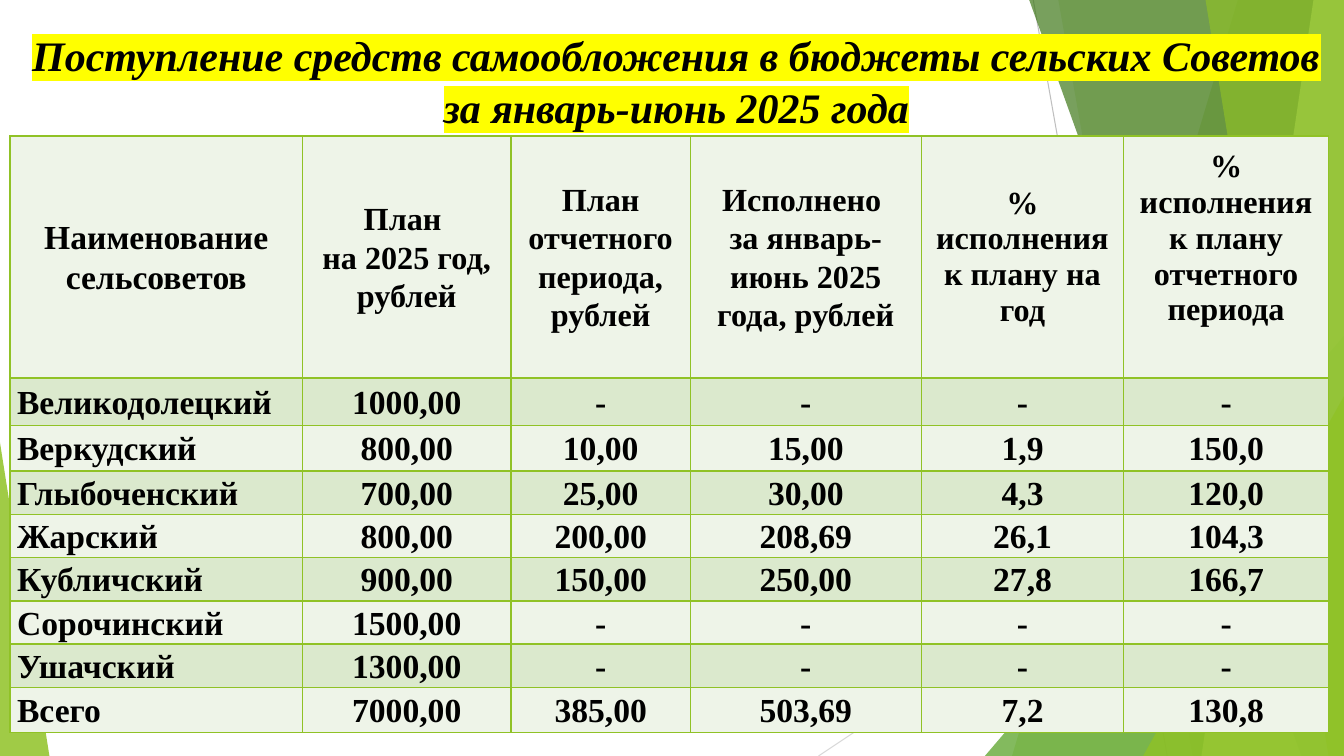
from lxml.etree import SubElement
from pptx import Presentation
from pptx.dml.color import RGBColor
from pptx.enum.shapes import MSO_CONNECTOR, MSO_SHAPE
from pptx.enum.text import MSO_ANCHOR, PP_ALIGN
from pptx.oxml.ns import qn
from pptx.util import Inches, Pt

WIDTH, HEIGHT = Inches(13.333), Inches(7.5)
GREEN = "90C226"
BANDS = ("EEF4E8", "DBE9CD")
TITLE = "Поступление средств самообложения в бюджеты сельских Советов за январь-июнь 2025 года"
HEADER = [
    "Наименование сельсоветов",
    "План \nна 2025 год, рублей",
    "План отчетного периода, рублей",
    "Исполнено \nза январь-июнь 2025 года, рублей",
    "% исполнения к плану на год",
    "% исполнения к плану отчетного периода",
]
COUNCILS = [
    ["Великодолецкий", "1000,00", "-", "-", "-", "-"],
    ["Веркудский", "800,00", "10,00", "15,00", "1,9", "150,0"],
    ["Глыбоченский", "700,00", "25,00", "30,00", "4,3", "120,0"],
    ["Жарский", "800,00", "200,00", "208,69", "26,1", "104,3"],
    ["Кубличский", "900,00", "150,00", "250,00", "27,8", "166,7"],
    ["Сорочинский", "1500,00", "-", "-", "-", "-"],
    ["Ушачский", "1300,00", "-", "-", "-", "-"],
    ["Всего", "7000,00", "385,00", "503,69", "7,2", "130,8"],
]
COLUMN_WEIGHTS = [2.9, 2.07, 1.78, 2.29, 2.01, 2.03]
ROW_WEIGHTS = [2.39, 0.47, 0.45, 0.43, 0.42, 0.42, 0.42, 0.42, 0.45]


def color(code):
    return RGBColor.from_string(code)


def across(percent):
    return round(WIDTH * percent / 100)


def down(percent):
    return round(HEIGHT * percent / 100)


def place(left, top, width, height):
    return across(left), down(top), across(width), down(height)


def apply(target, values):
    for name, value in values.items():
        setattr(target, name, value)


def write(para, text, size, italic=False):
    span = para.add_run()
    span.text = text
    apply(span.font, {"name": "Times New Roman", "size": Pt(size), "bold": True, "italic": italic})
    span.font.color.rgb = color("000000")
    return span


def paint(shape, code, opacity):
    shape.shadow.inherit = False
    shape.line.fill.background()
    shape.fill.solid()
    shape.fill.fore_color.rgb = color(code)
    tint = shape.fill._xPr.find(qn("a:solidFill"))[0]
    SubElement(tint, qn("a:alpha"), val=str(opacity * 1000))


def add_ray(page, start, end, code):
    ray = page.shapes.add_connector(
        MSO_CONNECTOR.STRAIGHT, across(start[0]), down(start[1]), across(end[0]), down(end[1]))
    ray.line.color.rgb = color(code)
    ray.line.width = Pt(0.75)
    SubElement(ray._element.spPr, qn("a:effectLst"))


def add_facet(page, top_left, bottom_left, code, opacity):
    builder = page.shapes.build_freeform(across(top_left), 0)
    builder.add_line_segments([(WIDTH, 0), (WIDTH, HEIGHT), (across(bottom_left), HEIGHT)])
    paint(builder.convert_to_shape(), code, opacity)


def add_corner(page, left, top, width, apex, code, opacity):
    corner = page.shapes.add_shape(
        MSO_SHAPE.ISOSCELES_TRIANGLE, *place(left, top, width, 100 - top))
    corner.adjustments[0] = apex
    paint(corner, code, opacity)


def add_backdrop(page):
    add_ray(page, (76.88, 0), (86.85, 100), "BFBFBF")
    add_ray(page, (100, 53.73), (60.9, 100), "D9D9D9")
    add_facet(page, 92.1, 75.3, GREEN, 30)
    add_facet(page, 78.75, 88.73, GREEN, 20)
    add_corner(page, 73.28, 44.4, 26.72, 1, "54A021", 72)
    add_facet(page, 76.58, 96.83, "3F7819", 70)
    add_facet(page, 97.73, 89.4, "C0E474", 70)
    add_facet(page, 89.7, 98.85, GREEN, 65)
    add_corner(page, 85.05, 52.4, 14.95, 1, GREEN, 80)
    add_corner(page, 0, 58.53, 3.68, 0, GREEN, 85)


def add_title(page, box):
    frame = page.shapes.add_textbox(*box).text_frame
    apply(frame, {"word_wrap": True, "vertical_anchor": MSO_ANCHOR.TOP, "margin_top": Inches(0.08)})
    para = frame.paragraphs[0]
    apply(para, {"alignment": PP_ALIGN.CENTER, "line_spacing": 1.03})
    span = write(para, TITLE, 30, italic=True)
    properties = span.font._element
    highlight = SubElement(properties, qn("a:highlight"))
    SubElement(highlight, qn("a:srgbClr"), val="FFFF00")
    properties.find(qn("a:solidFill")).addnext(highlight)


def add_borders(cell):
    properties = cell._tc.get_or_add_tcPr()
    for side in ("a:lnL", "a:lnR", "a:lnT", "a:lnB"):
        line = SubElement(properties, qn(side), w=str(Pt(1)))
        SubElement(SubElement(line, qn("a:solidFill")), qn("a:srgbClr"), val=GREEN)


def fill_cell(cell, text, row, column):
    last_header = row == 0 and column == len(HEADER) - 1
    apply(cell, {
        "vertical_anchor": MSO_ANCHOR.MIDDLE,
        "margin_left": Inches(0.07), "margin_right": Inches(0.07),
        "margin_top": 0, "margin_bottom": Inches(0.37) if last_header else 0,
    })
    add_borders(cell)
    cell.fill.solid()
    cell.fill.fore_color.rgb = color(BANDS[row % 2])
    frame = cell.text_frame
    for index, line in enumerate(text.split("\n")):
        para = frame.add_paragraph() if index else frame.paragraphs[0]
        para.alignment = PP_ALIGN.LEFT if row and not column else PP_ALIGN.CENTER
        para.line_spacing = 1.0 if row == 0 and column > 3 else 1.07
        write(para, line, 23 if row == 0 and column else 24)


def add_receipts_table(page, box):
    rows = [HEADER, *COUNCILS]
    table = page.shapes.add_table(len(rows), len(HEADER), *box).table
    apply(table, {"first_row": False, "horz_banding": False})
    for column, weight in zip(table.columns, COLUMN_WEIGHTS):
        column.width = round(box[2] * weight / sum(COLUMN_WEIGHTS))
    for row, weight in zip(table.rows, ROW_WEIGHTS):
        row.height = round(box[3] * weight / sum(ROW_WEIGHTS))
    for row, texts in enumerate(rows):
        for column, text in enumerate(texts):
            fill_cell(table.cell(row, column), text, row, column)


def main():
    deck = Presentation()
    apply(deck, {"slide_width": WIDTH, "slide_height": HEIGHT})
    page = deck.slides.add_slide(deck.slide_layouts[6])
    add_backdrop(page)
    add_title(page, place(0.68, 2.67, 99.3, 14.93))
    add_receipts_table(page, place(0.75, 18, 98.1, 78.6))
    deck.save("out.pptx")


if __name__ == "__main__":
    main()
